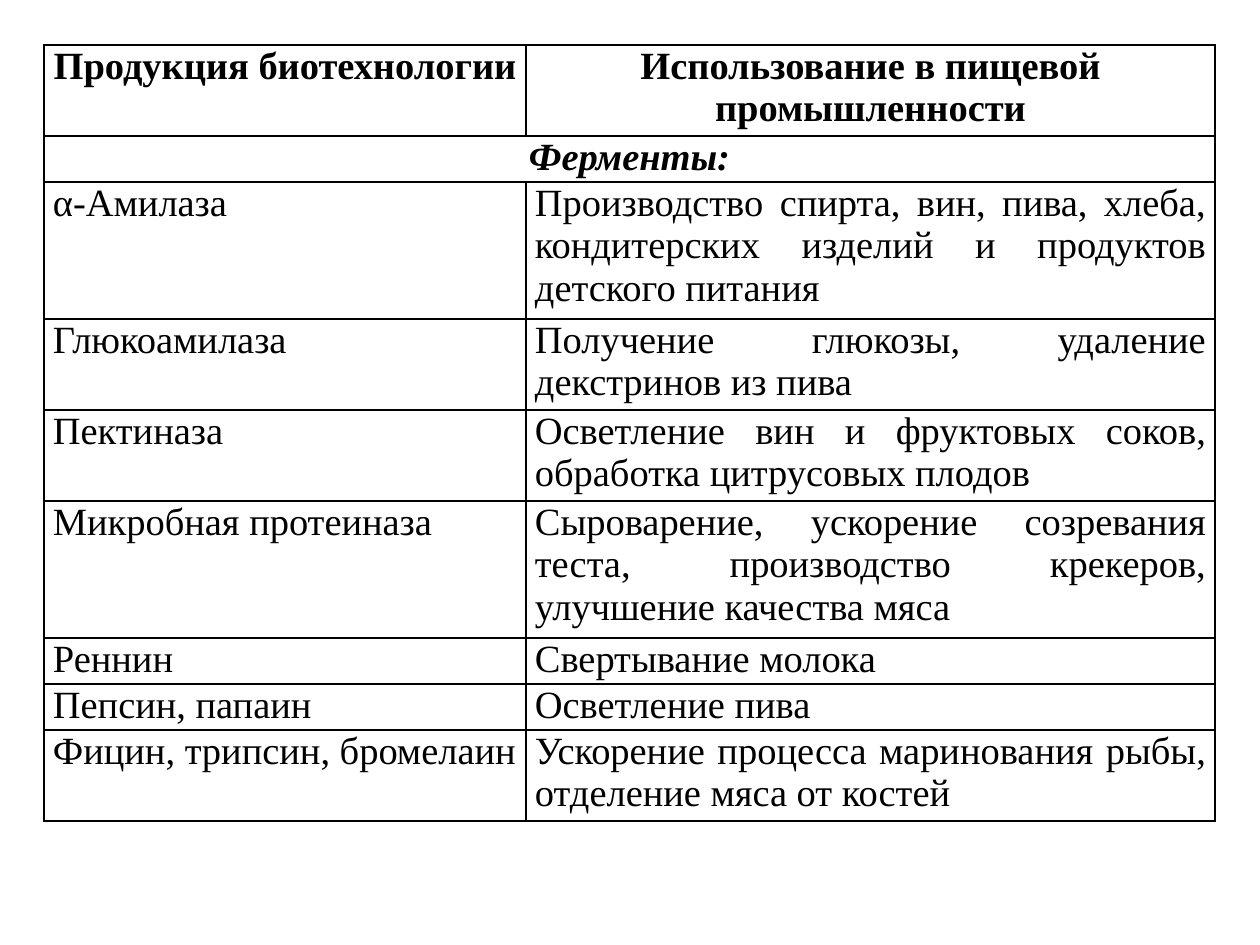
from lxml.etree import SubElement
from pptx import Presentation
from pptx.dml.color import RGBColor
from pptx.enum.text import MSO_ANCHOR, PP_ALIGN
from pptx.oxml.ns import qn
from pptx.util import Emu, Pt

EMU_PER_PX = 914400 / 126
BLACK = RGBColor(0x00, 0x00, 0x00)
FONT = "Times New Roman"
BORDER_PT = 1
CELL_MARGIN = 9
COLUMN_WIDTHS = (482, 689)
HEIGHT_BY_LINES = {1: 46, 2: 91, 3: 137}

HEADINGS = ("Продукция биотехнологии", "Использование в пищевой промышленности")
GROUP = "Ферменты:"
ENZYMES = (
    (3, "α-Амилаза",
     "Производство спирта, вин, пива, хлеба, кондитерских изделий и продуктов детского питания"),
    (2, "Глюкоамилаза", "Получение глюкозы, удаление декстринов из пива"),
    (2, "Пектиназа", "Осветление вин и фруктовых соков, обработка цитрусовых плодов"),
    (3, "Микробная протеиназа",
     "Сыроварение, ускорение созревания теста, производство крекеров, улучшение качества мяса"),
    (1, "Реннин", "Свертывание молока"),
    (1, "Пепсин, папаин", "Осветление пива"),
    (2, "Фицин, трипсин, бромелаин",
     "Ускорение процесса маринования рыбы, отделение мяса от костей"),
)


def px(length):
    return Emu(round(length * EMU_PER_PX))


def write_text(cell, text, size=22, bold=False, italic=False, alignment=PP_ALIGN.JUSTIFY):
    paragraph = cell.text_frame.paragraphs[0]
    paragraph.alignment = alignment
    run = paragraph.add_run()
    run.text = text
    run.font.name = FONT
    run.font.size = Pt(size)
    run.font.bold = bold
    run.font.italic = italic
    run.font.color.rgb = BLACK


def format_cell(cell):
    cell.margin_left = cell.margin_right = px(CELL_MARGIN)
    cell.margin_top = cell.margin_bottom = 0
    cell.vertical_anchor = MSO_ANCHOR.TOP
    properties = cell._tc.get_or_add_tcPr()
    for side in ("a:lnL", "a:lnR", "a:lnT", "a:lnB"):
        line = SubElement(properties, qn(side), w=str(Pt(BORDER_PT)))
        fill = SubElement(line, qn("a:solidFill"))
        SubElement(fill, qn("a:srgbClr"), val=str(BLACK))
    cell.fill.background()


def add_enzyme_table(slide, left, top):
    line_counts = [2, 1] + [lines for lines, _, _ in ENZYMES]
    heights = [HEIGHT_BY_LINES[lines] for lines in line_counts]
    table = slide.shapes.add_table(
        len(heights), len(COLUMN_WIDTHS),
        px(left), px(top), px(sum(COLUMN_WIDTHS)), px(sum(heights)),
    ).table
    table.horz_banding = False
    for column, width in zip(table.columns, COLUMN_WIDTHS):
        column.width = px(width)
    for row, height in zip(table.rows, heights):
        row.height = px(height)
    for cell in table.iter_cells():
        format_cell(cell)

    for column, heading in enumerate(HEADINGS):
        write_text(table.cell(0, column), heading, bold=True, alignment=PP_ALIGN.CENTER)
    table.cell(1, 0).merge(table.cell(1, 1))
    write_text(table.cell(1, 0), GROUP, bold=True, italic=True, alignment=PP_ALIGN.CENTER)
    for row, (_, enzyme, use) in enumerate(ENZYMES, start=2):
        write_text(table.cell(row, 0), enzyme)
        write_text(table.cell(row, 1), use)


def main():
    presentation = Presentation()
    presentation.slide_width = px(1260)
    presentation.slide_height = px(945)
    slide = presentation.slides.add_slide(presentation.slide_layouts[6])
    add_enzyme_table(slide, left=44, top=45)
    presentation.save("out.pptx")


if __name__ == "__main__":
    main()
